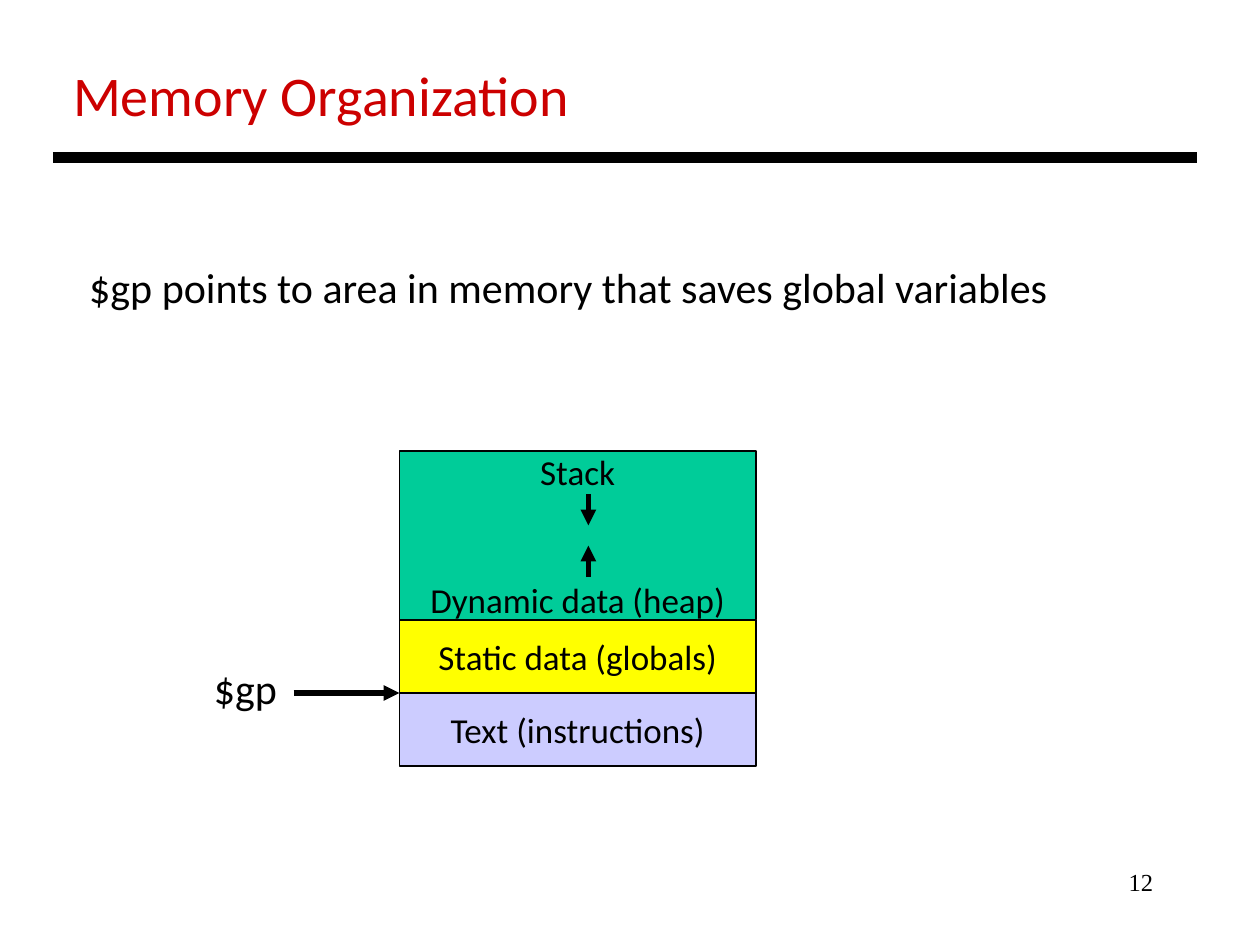
from lxml import etree
from pptx import Presentation
from pptx.dml.color import RGBColor
from pptx.enum.shapes import MSO_CONNECTOR, MSO_SHAPE
from pptx.enum.text import MSO_ANCHOR, MSO_AUTO_SIZE, PP_ALIGN
from pptx.oxml.ns import qn
from pptx.util import Inches, Pt

STRAIGHT = MSO_CONNECTOR.STRAIGHT
RECTANGLE = MSO_SHAPE.RECTANGLE
TOP, MIDDLE = MSO_ANCHOR.TOP, MSO_ANCHOR.MIDDLE
LEFT, CENTER, RIGHT = PP_ALIGN.LEFT, PP_ALIGN.CENTER, PP_ALIGN.RIGHT
NO_AUTOFIT = MSO_AUTO_SIZE.NONE

BLACK = "000000"
TITLE_LAYOUT = 5
MEMORY_LEFT, MEMORY_WIDTH = 3.17, 2.83
SEGMENT_HEIGHT = 0.58
STACK_TOP, STATIC_TOP, TEXT_TOP = 3.58, 4.92, 5.5
GROWTH_X = 4.67


def rgb(hex_color):
    return RGBColor.from_string(hex_color)


def write(frame, lines, size, align=LEFT, anchor=TOP, color=BLACK, font="Calibri", gap=0):
    frame.auto_size = NO_AUTOFIT
    frame.word_wrap = False
    frame.vertical_anchor = anchor
    for index, line in enumerate(lines):
        paragraph = frame.add_paragraph() if index else frame.paragraphs[0]
        paragraph.alignment = align
        paragraph.space_before = Pt(gap if index else 0)
        run = paragraph.add_run()
        run.text = line
        run.font.size = Pt(size)
        run.font.name = font
        run.font.color.rgb = rgb(color)


def add_title(slide, text):
    title = slide.shapes.title
    title.left, title.top = Inches(0.48), Inches(0.43)
    title.width, title.height = Inches(4.18), Inches(0.64)
    write(title.text_frame, [text], 32, color="CC0000")


def add_label(slide, box, text, size, **style):
    label = slide.shapes.add_textbox(*map(Inches, box))
    write(label.text_frame, [text], size, **style)


def add_segment(slide, top, height, fill, lines, gap=0):
    segment = slide.shapes.add_shape(
        RECTANGLE, Inches(MEMORY_LEFT), Inches(top), Inches(MEMORY_WIDTH), Inches(height)
    )
    segment.shadow.inherit = False
    segment.fill.solid()
    segment.fill.fore_color.rgb = rgb(fill)
    segment.line.color.rgb = rgb(BLACK)
    segment.line.width = Pt(0.75)
    write(segment.text_frame, lines, 20, CENTER, MIDDLE, gap=gap)


def add_line(slide, start, end, width, arrow=False):
    line = slide.shapes.add_connector(STRAIGHT, *map(Inches, start + end))
    line.line.color.rgb = rgb(BLACK)
    line.line.width = Pt(width)
    if arrow:
        outline = line.line._get_or_add_ln()
        etree.SubElement(outline, qn("a:tailEnd"), type="triangle")
    etree.SubElement(line._element.spPr, qn("a:effectLst"))


def main():
    presentation = Presentation()
    presentation.slide_width, presentation.slide_height = Inches(10), Inches(7.5)
    slide = presentation.slides.add_slide(presentation.slide_layouts[TITLE_LAYOUT])

    add_title(slide, "Memory Organization")
    add_line(slide, (0.42, 1.25), (9.5, 1.25), 6)
    add_label(slide, (0.61, 2.03, 7.87, 0.91),
              "$gp points to area in memory that saves global variables", 24)

    add_segment(slide, STACK_TOP, STATIC_TOP - STACK_TOP, "00CC99",
                ["Stack", "Dynamic data (heap)"], gap=49)
    add_segment(slide, STATIC_TOP, SEGMENT_HEIGHT, "FFFF00", ["Static data (globals)"])
    add_segment(slide, TEXT_TOP, SEGMENT_HEIGHT, "CCCCFF", ["Text (instructions)"])

    for start_y, end_y in ((3.92, 4.17), (4.58, 4.33)):
        add_line(slide, (GROWTH_X, start_y), (GROWTH_X, end_y), 3, arrow=True)
    add_line(slide, (2.33, TEXT_TOP), (MEMORY_LEFT, TEXT_TOP), 3, arrow=True)
    add_label(slide, (1.6, 5.21, 0.7, 0.5), "$gp", 24)
    add_label(slide, (7.17, 6.83, 2.08, 0.5), "12", 14, align=RIGHT, font="Times New Roman")

    presentation.save("out.pptx")


if __name__ == "__main__":
    main()
